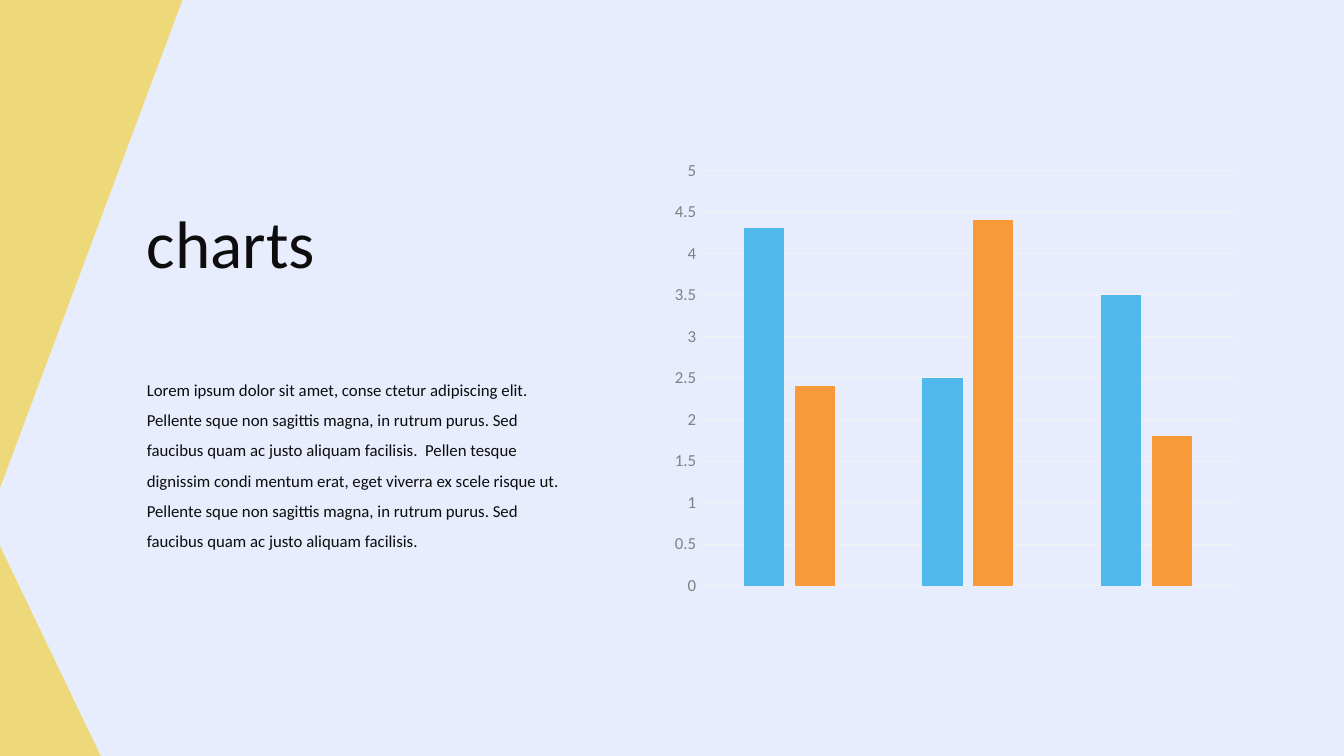
from pptx import Presentation
from pptx.chart.data import CategoryChartData
from pptx.dml.color import RGBColor
from pptx.enum.chart import XL_CHART_TYPE, XL_TICK_MARK
from pptx.enum.shapes import MSO_SHAPE
from pptx.enum.text import MSO_ANCHOR, MSO_AUTO_SIZE, PP_ALIGN
from pptx.util import Cm, Pt

COLUMN = XL_CHART_TYPE.COLUMN_CLUSTERED
NO_TICK = XL_TICK_MARK.NONE
WEDGE = MSO_SHAPE.RIGHT_TRIANGLE
TOP = MSO_ANCHOR.TOP
FIT = MSO_AUTO_SIZE.SHAPE_TO_FIT_TEXT
LEFT = PP_ALIGN.LEFT

PALE = RGBColor(0xE7, 0xED, 0xFD)
GOLD = RGBColor(0xED, 0xD9, 0x7A)
INK = RGBColor(0x0D, 0x0D, 0x0D)
GREY = RGBColor(0x80, 0x80, 0x80)
GRID = RGBColor(0xF2, 0xF2, 0xF2)
BLUE = RGBColor(0x51, 0xB8, 0xEB)
ORANGE = RGBColor(0xF8, 0x9A, 0x3A)

FACE = "Calibri"
BODY = (
    "Lorem ipsum dolor sit amet, conse ctetur adipiscing elit. "
    "Pellente sque non sagittis magna, in rutrum purus. "
    "Sed faucibus quam ac justo aliquam facilisis.  "
    "Pellen tesque dignissim condi mentum erat, eget viverra ex scele risque ut. "
    "Pellente sque non sagittis magna, in rutrum purus. "
    "Sed faucibus quam ac justo aliquam facilisis."
)
SERIES = [
    ("Series 1", (4.3, 2.5, 3.5), BLUE),
    ("Series 2", (2.4, 4.4, 1.8), ORANGE),
]


def apply(item, **values):
    """Set each named format value on an item."""
    for name, value in values.items():
        setattr(item, name, value)


def style(font, size, color):
    """Give a font its face, size and colour."""
    apply(font, name=FACE, size=Pt(size), bold=False)
    font.color.rgb = color


def wedge(slide, box, flip=False):
    """Draw a gold corner triangle in the box."""
    shape = slide.shapes.add_shape(WEDGE, *box)
    shape.shadow.inherit = False
    shape.fill.solid()
    shape.fill.fore_color.rgb = GOLD
    shape.line.fill.background()
    if flip:
        shape.element.spPr.xfrm.set("flipV", "1")


def edge(slide, box):
    """Place the two triangles along the left edge of the box."""
    left, top, width, height = box
    low = Cm(5.29)
    wedge(slide, (left, top + height - low, Cm(2.54), low))
    wedge(slide, (left, top, width, Cm(12.3)), flip=True)


def write(shape, box, text, size, space):
    """Put one left-aligned paragraph in a shape."""
    apply(shape, **dict(zip(("left", "top", "width", "height"), box)))
    frame = shape.text_frame
    frame.text = text
    apply(frame, word_wrap=True, vertical_anchor=TOP, auto_size=FIT)
    para = frame.paragraphs[0]
    apply(para, alignment=LEFT, line_spacing=space, space_before=Pt(0))
    style(para.runs[0].font, size, INK)


def words(slide, box):
    """Place the title and the body text in the box."""
    left, top, width, height = box
    write(slide.shapes.title, (left, top, Cm(8.36), Cm(2.31)), "charts", 48, 1.0)
    drop = Cm(4.24)
    area = (left, top + drop, width, height - drop)
    write(slide.shapes.add_textbox(*area), area, BODY, 12, 1.5)


def bars(slide, box):
    """Place the column chart in the box."""
    data = CategoryChartData()
    data.categories = ["1", "2", "3"]
    for name, values, _ in SERIES:
        data.add_series(name, values)
    chart = slide.shapes.add_chart(COLUMN, *box, data).chart
    apply(chart, has_legend=False, has_title=False)
    style(chart.font, 10, INK)
    plot = chart.plots[0]
    apply(plot, gap_width=219, overlap=-27, vary_by_categories=False)
    for series, (_, _, color) in zip(plot.series, SERIES):
        series.format.fill.solid()
        series.format.fill.fore_color.rgb = color
    chart.category_axis.visible = False
    axis = chart.value_axis
    apply(axis, minimum_scale=0, maximum_scale=5, major_unit=0.5,
          major_tick_mark=NO_TICK, minor_tick_mark=NO_TICK)
    axis.format.line.fill.background()
    line = axis.major_gridlines.format.line
    line.width = Pt(0.75)
    line.color.rgb = GRID
    style(axis.tick_labels.font, 12, GREY)


def main():
    """Build the slide and save it."""
    deck = Presentation()
    apply(deck, slide_width=Cm(33.87), slide_height=Cm(19.05))
    slide = deck.slides.add_slide(deck.slide_layouts[5])
    slide.background.fill.solid()
    slide.background.fill.fore_color.rgb = PALE
    edge(slide, (0, 0, Cm(4.6), deck.slide_height))
    words(slide, (Cm(3.45), Cm(4.95), Cm(11.23), Cm(9.04)))
    bars(slide, (Cm(16.71), Cm(3.81), Cm(14.73), Cm(11.43)))
    deck.save("out.pptx")


if __name__ == "__main__":
    main()
